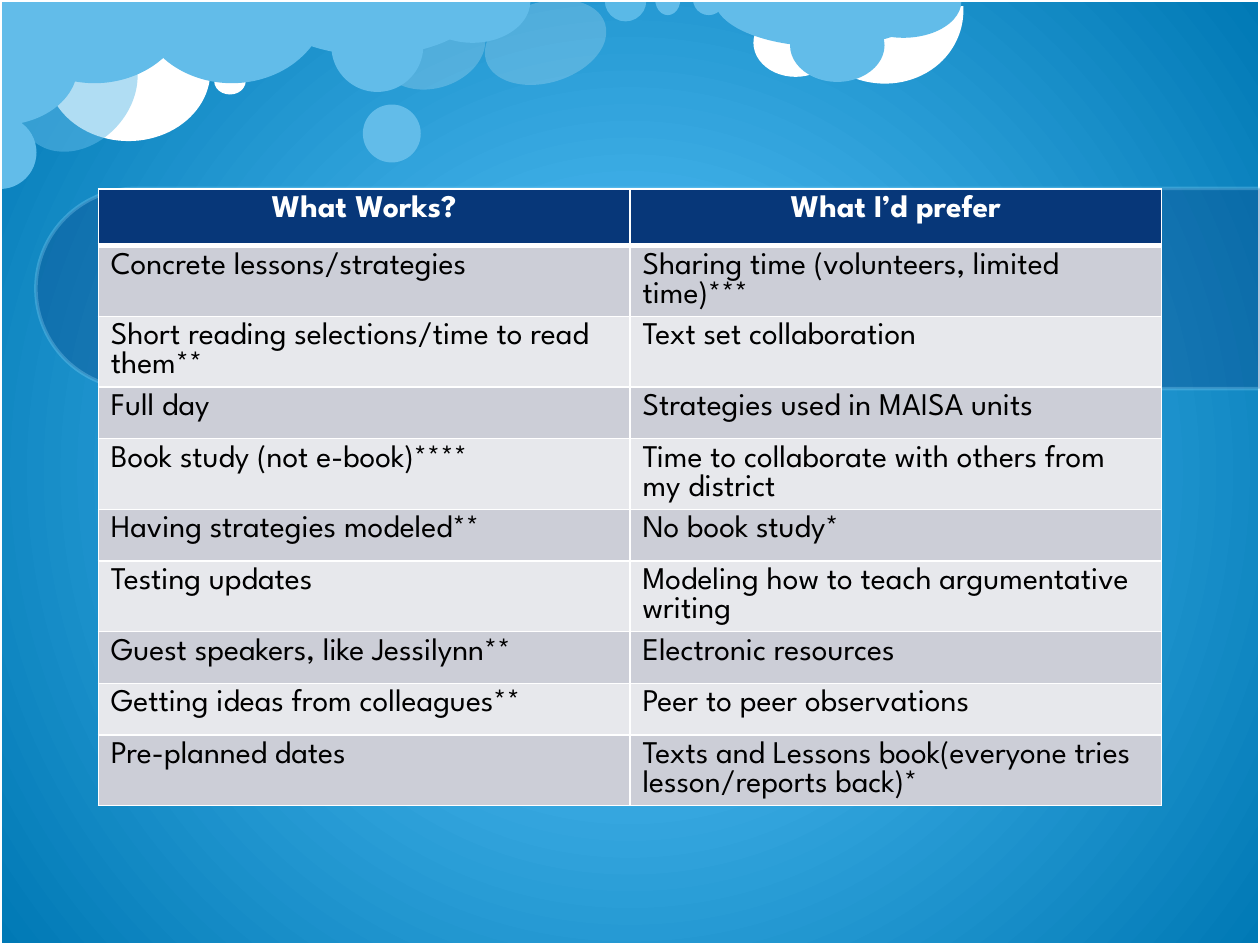
import pptx
import pptx.util
import pptx.dml.color
import pptx.enum.shapes
import pptx.enum.text
import pptx.oxml
import pptx.oxml.ns

RGBColor = pptx.dml.color.RGBColor
SHAPE = pptx.enum.shapes.MSO_SHAPE
qn = pptx.oxml.ns.qn
NS = pptx.oxml.ns.nsdecls("a")

WHITE = RGBColor(0xFF, 0xFF, 0xFF)
BLACK = RGBColor(0, 0, 0)
GLOW = RGBColor(0x5D, 0xC9, 0xFF)
DEEP = RGBColor(0x00, 0x79, 0xB5)
SKY = RGBColor(0x62, 0xBC, 0xE9)
PALE = RGBColor(0x8F, 0xD9, 0xFB)
NAVY = RGBColor(0x07, 0x37, 0x79)
BAND_DARK = RGBColor(0xCC, 0xCE, 0xD7)
BAND_LIGHT = RGBColor(0xE7, 0xE8, 0xEC)

FONT = "League Spartan"
WIDTH, HEIGHT = 10, 7.5
HALF = (0, 108)
BUBBLE = (0, 107.77)
ARC_HALF = (151.8, 44.48)

CLOUDS = [
    (SHAPE.OVAL, 3.11, -0.05, 0.64, 0.86, WHITE, 20, 72.8, ()),
    (SHAPE.OVAL, 0.37, 0.01, 1.3, 1.11, WHITE, 100, 0, ()),
    (SHAPE.ARC, 6.39, -0.6, 1.21, 1.31, WHITE, 100, 106.5, ARC_HALF),
    (SHAPE.OVAL, 5.98, 0.07, 0.67, 0.54, WHITE, 100, 0, ()),
    (SHAPE.PIE, -0.01, -0.66, 1.52, 1.32, SKY, 100, 0, HALF),
    (SHAPE.PIE, 2.08, -0.44, 1.75, 0.88, SKY, 100, 0, HALF),
    (SHAPE.OVAL, 2.88, 0.83, 0.46, 0.46, SKY, 100, 0, ()),
    (SHAPE.OVAL, 0.19, 0.18, 0.85, 1.07, SKY, 50, 41.8, ()),
    (SHAPE.PIE, -0.29, 0.92, 0.58, 0.58, SKY, 100, 270, BUBBLE),
    (SHAPE.OVAL, 1.7, 0.54, 0.25, 0.21, WHITE, 100, 0, ()),
    (SHAPE.PIE, 1.08, -0.66, 1.52, 1.32, SKY, 100, 0, HALF),
    (SHAPE.PIE, 5.67, -0.38, 1.75, 0.75, SKY, 100, 0, HALF),
    (SHAPE.OVAL, 6.27, 0.07, 0.75, 0.58, SKY, 100, 0, ()),
    (SHAPE.PIE, 6.71, -0.28, 0.92, 0.58, SKY, 100, 0, HALF),
    (SHAPE.OVAL, 4.01, -0.16, 0.64, 0.99, WHITE, 20, 72.8, ()),
    (SHAPE.PIE, 4.8, -0.16, 0.33, 0.33, PALE, 50, 0, BUBBLE),
    (SHAPE.PIE, 5.2, -0.13, 0.2, 0.25, SKY, 100, 0, BUBBLE),
    (SHAPE.PIE, 5.5, -0.13, 0.25, 0.25, SKY, 100, 0, BUBBLE),
    (SHAPE.OVAL, 2.63, 0, 0.73, 0.73, SKY, 100, 0, ()),
    (SHAPE.PIE, 3.29, -0.33, 0.92, 0.67, SKY, 100, 0, HALF),
    (SHAPE.PIE, -0.47, -0.09, 0.93, 1.24, SKY, 100, 270, HALF),
]

ROWS = [
    ("What Works?", "What I’d prefer"),
    ("Concrete lessons/strategies", "Sharing time (volunteers, limited time)***"),
    ("Short reading selections/time to read them**", "Text set collaboration"),
    ("Full day", "Strategies used in MAISA units"),
    ("Book study (not e-book)****", "Time to collaborate with others from my district"),
    ("Having strategies modeled**", "No book study*"),
    ("Testing updates", "Modeling how to teach argumentative writing"),
    ("Guest speakers, like Jessilynn**", "Electronic resources"),
    ("Getting ideas from colleagues**", "Peer to peer observations"),
    ("Pre-planned dates", "Texts and Lessons book(everyone tries lesson/reports back)*"),
]


def set_background(s):
    fill = s.background.fill
    fill.gradient()
    for stop, color, position in zip(fill.gradient_stops, (GLOW, DEEP), (0, 1)):
        stop.color.rgb = color
        stop.position = position
    grad = s.background._cSld.find(".//" + qn("a:gradFill"))
    lin = grad.find(qn("a:lin"))
    radial = pptx.oxml.parse_xml(
        f'<a:path {NS} path="circle"><a:fillToRect l="50000" t="50000" r="50000" b="50000"/></a:path>')
    grad.replace(lin, radial)


def set_alpha(parent, percent):
    if percent < 100:
        color = parent.find(".//" + qn("a:srgbClr"))
        color.append(pptx.oxml.parse_xml(f'<a:alpha {NS} val="{percent * 1000}"/>'))


def add_shape(s, kind, left, top, width, height, color=None, alpha=100, rotation=0,
              adjustments=(), line=None, line_alpha=100):
    sp = s.shapes.add_shape(kind, *map(pptx.util.Inches, (left, top, width, height)))
    sp.shadow.inherit = False
    sp.rotation = rotation
    for i, value in enumerate(adjustments):
        sp.adjustments[i] = value
    if color is None:
        sp.fill.background()
    else:
        sp.fill.solid()
        sp.fill.fore_color.rgb = color
        set_alpha(sp._element.spPr.find(qn("a:solidFill")), alpha)
    if line is None:
        sp.line.fill.background()
    else:
        sp.line.color.rgb = line
        sp.line.width = pptx.util.Pt(2)
        set_alpha(sp._element.spPr.find(qn("a:ln")), line_alpha)


def set_borders(cell, widths):
    tcPr = cell._tc.get_or_add_tcPr()
    for i, (side, width) in enumerate(zip("LRTB", widths)):
        tcPr.insert(i, pptx.oxml.parse_xml(
            f'<a:ln{side} {NS} w="{pptx.util.Pt(width)}"><a:solidFill>'
            f'<a:srgbClr val="{WHITE}"/></a:solidFill></a:ln{side}>'))


def fill_cell(cell, text, row):
    header = row == 0
    cell.fill.solid()
    cell.fill.fore_color.rgb = NAVY if header else (BAND_LIGHT, BAND_DARK)[row % 2]
    set_borders(cell, (1, 1, 3 if row == 1 else 1, 3 if header else 1))
    cell.text_frame.text = text
    p = cell.text_frame.paragraphs[0]
    if header:
        p.alignment = pptx.enum.text.PP_ALIGN.CENTER
    font = p.runs[0].font
    font.name = FONT
    font.size = pptx.util.Pt(18)
    font.bold = header
    font.color.rgb = WHITE if header else BLACK


def add_survey_table(s, left, top, width, header_height, row_height):
    height = header_height + row_height * (len(ROWS) - 1)
    table = s.shapes.add_table(
        len(ROWS), 2, *map(pptx.util.Inches, (left, top, width, height))).table
    for i, texts in enumerate(ROWS):
        table.rows[i].height = pptx.util.Inches(row_height if i else header_height)
        for j, text in enumerate(texts):
            fill_cell(table.cell(i, j), text, i)


def main():
    prs = pptx.Presentation()
    prs.slide_width = pptx.util.Inches(WIDTH)
    prs.slide_height = pptx.util.Inches(HEIGHT)
    s = prs.slides.add_slide(prs.slide_layouts[6])
    set_background(s)
    for cloud in CLOUDS:
        add_shape(s, *cloud)
    add_shape(s, SHAPE.RECTANGLE, 0, 0, WIDTH, HEIGHT, line=WHITE)
    add_shape(s, SHAPE.ROUND_2_SAME_RECTANGLE, 4.35, -2.57, 1.59, 9.72, NAVY, 30, 270,
              (0.5, 0), PALE, 30)
    add_survey_table(s, 0.78, 1.5, 8.44, 0.45, 0.41)
    prs.save("out.pptx")


if __name__ == "__main__":
    main()
